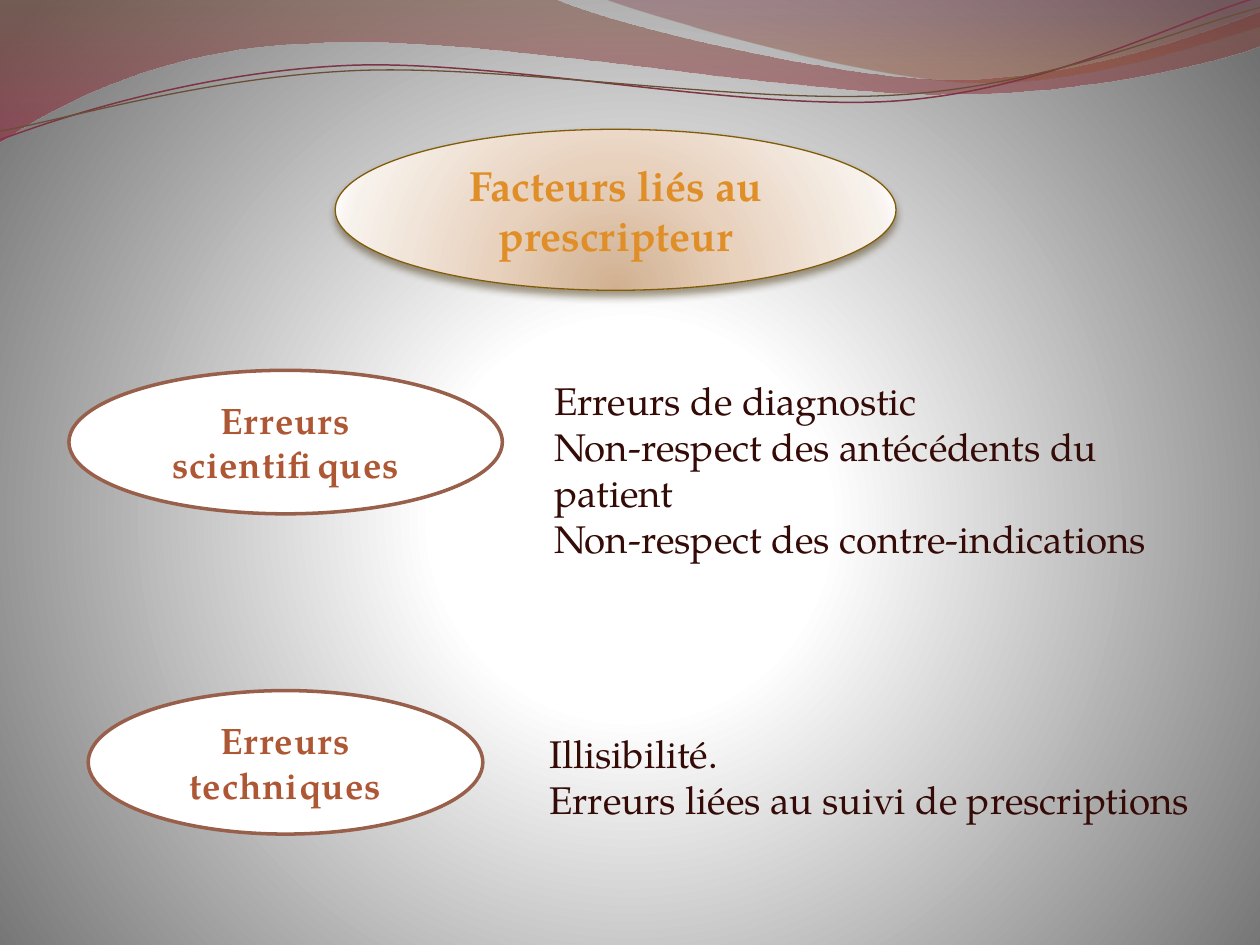
import pptx
import pptx.util
import pptx.dml.color
import pptx.enum.shapes
import pptx.enum.text
import pptx.oxml
import pptx.oxml.ns

Pt = pptx.util.Pt
COLORS = {
    "white": "FFFFFF", "edge_grey": "707070", "title": "E08E27",
    "title_line": "815B07", "title_shadow": "3E2B03",
    "label": "AD5735", "label_line": "98604A", "body": "340B07",
    "brown": "764531", "crimson": "96213A", "plum": "722234",
    "rust": "944F34", "rose_line": "7D3444", "umber_line": "694F36",
    "tan": "D1B090", "sand": "E8D2BE", "cream": "F7F1EB", "ivory": "FDFAF8",
}
FONT = "TeX Gyre Pagella"
LINEAR = '<a:lin ang="5400000" scaled="0"/>'

UPPER_BAND = ((0, 0), [
    (316.8, -0.7), (342.7, 12.2, 478.1, 45.4, 545.8, 45.4),
    (614.2, 45.4, 689.8, 18.7, 720, 6.5), (720.7, 25.9),
    (707.8, 31.7, 626.4, 54.7, 537.1, 54), (447.8, 54, 275, 20.2, 185, 24.5),
    (92.9, 25.9, 33.1, 59.8, -0.7, 81.4)])
RIGHT_BAND = ((344.9, -0.7), [
    (366.5, 7.9, 491, 44.6, 553.7, 46.8),
    (616.3, 49.7, 691.9, 23, 720, 15.1), (720, 0)])
ROSE_WAVE = ((0, 79.9), [
    (34.6, 67, 113.8, 41, 199.4, 37.4), (284.4, 33.8, 427, 64.1, 513.4, 57.6),
    (599.8, 51.1, 675.4, 10.8, 718.6, -1.4)])
UMBER_WAVE = ((0, 74.9), [
    (33.8, 69.1, 118.1, 43.9, 203.8, 40.3), (290.2, 36.7, 429.8, 60.5, 516.2, 54),
    (601.9, 48.2, 677.5, 15.1, 720, 4.3)])


def rgb(name):
    return pptx.dml.color.RGBColor.from_string(COLORS[name])


def drawing_xml(tag, content):
    namespace = pptx.oxml.ns.nsdecls("a")
    return pptx.oxml.parse_xml(f"<a:{tag} {namespace}>{content}</a:{tag}>")


def color_xml(name, alpha=100):
    opacity = f'<a:alpha val="{alpha * 1000}"/>' if alpha < 100 else ""
    return f'<a:srgbClr val="{COLORS[name]}">{opacity}</a:srgbClr>'


def circle(left, top, right, bottom):
    return (f'<a:path path="circle"><a:fillToRect l="{left * 1000}" '
            f't="{top * 1000}" r="{right * 1000}" b="{bottom * 1000}"/></a:path>')


def paint_gradient(owner, fill, stops, direction):
    fill.background()
    empty = next(owner.iter(pptx.oxml.ns.qn("a:noFill")))
    stops_xml = "".join(
        f'<a:gs pos="{position * 1000}">{color_xml(*color)}</a:gs>'
        for position, *color in stops)
    gradient = drawing_xml("gradFill", f"<a:gsLst>{stops_xml}</a:gsLst>{direction}")
    empty.getparent().replace(empty, gradient)


def outline(shape, color, width):
    shape.line.color.rgb = rgb(color)
    shape.line.width = Pt(width)


def add_curve(page, route, close):
    start, segments = route
    builder = page.shapes.build_freeform(*map(Pt, start))
    builder.add_line_segments(
        [tuple(map(Pt, segment[-2:])) for segment in segments], close=close)
    shape = builder.convert_to_shape()
    shape.shadow.inherit = False
    sides = list(shape.element.iter(pptx.oxml.ns.qn("a:lnTo")))
    for side, segment in zip(sides, segments):
        if len(segment) == 6:
            points = "".join(
                f'<a:pt x="{Pt(x) - shape.left}" y="{Pt(y) - shape.top}"/>'
                for x, y in zip(segment[::2], segment[1::2]))
            side.getparent().replace(side, drawing_xml("cubicBezTo", points))
    return shape


def add_band(page, route, stops):
    band = add_curve(page, route, True)
    paint_gradient(band.element, band.fill, stops, LINEAR)
    band.line.fill.background()


def add_wave(page, route, color, width):
    wave = add_curve(page, route, False)
    wave.fill.background()
    outline(wave, color, width)


def write_text(box, lines, color, align, frame_format, font_format):
    frame = box.text_frame
    for name, value in frame_format.items():
        setattr(frame, name, value)
    frame.text = "\n".join(lines)
    for para in frame.paragraphs:
        para.alignment = align
        for span in para.runs:
            for name, value in font_format.items():
                setattr(span.font, name, value)
            span.font.color.rgb = rgb(color)


def add_ellipse(page, place, text, color, size, spacing=0):
    ellipse = page.shapes.add_shape(
        pptx.enum.shapes.MSO_SHAPE.OVAL, *map(Pt, place))
    ellipse.shadow.inherit = False
    write_text(ellipse, [text], color, pptx.enum.text.PP_ALIGN.CENTER,
               {"word_wrap": True,
                "vertical_anchor": pptx.enum.text.MSO_ANCHOR.MIDDLE},
               {"name": FONT, "size": Pt(size), "bold": True})
    if spacing:
        for span in ellipse.text_frame.paragraphs[0].runs:
            span.font._element.set("spc", str(int(spacing * 100)))
    return ellipse


def add_title(page):
    title = add_ellipse(page, (191.5, 73.9, 320.5, 92),
                        "Facteurs liés au prescripteur", "title", 24)
    paint_gradient(title.element, title.fill,
                   [(0, "tan"), (43, "sand"), (93, "cream"), (100, "ivory")],
                   circle(50, 130, 50, -30))
    outline(title, "title_line", 0.75)
    effects = next(title.element.iter(pptx.oxml.ns.qn("a:effectLst")))
    effects.getparent().replace(effects, drawing_xml(
        "effectLst",
        f'<a:outerShdw blurRad="{Pt(4.5)}" dist="{Pt(3)}" dir="5400000" '
        f'rotWithShape="0">{color_xml("title_shadow", 48)}</a:outerShdw>'))


def add_label(page, place, text):
    label = add_ellipse(page, place, text, "label", 21, 0.5)
    label.fill.solid()
    label.fill.fore_color.rgb = rgb("white")
    outline(label, "label_line", 2)


def add_details(page, place, lines):
    box = page.shapes.add_textbox(*map(Pt, place))
    write_text(box, lines, "body", pptx.enum.text.PP_ALIGN.LEFT,
               {"word_wrap": True, "margin_right": Pt(10)},
               {"name": FONT, "size": Pt(22)})


def main():
    deck = pptx.Presentation()
    deck.slide_width, deck.slide_height = Pt(720), Pt(540)
    page = deck.slides.add_slide(deck.slide_layouts[6])
    paint_gradient(page.element, page.background.fill,
                   [(0, "white"), (25, "white"), (100, "edge_grey")],
                   circle(10, 110, 10, 100))

    add_band(page, UPPER_BAND, [(0, "brown", 45), (100, "crimson", 55)])
    add_band(page, RIGHT_BAND, [(0, "plum", 30), (80, "rust", 45)])
    add_wave(page, ROSE_WAVE, "rose_line", 0.85)
    add_wave(page, UMBER_WAVE, "umber_line", 0.75)

    add_title(page)
    add_label(page, (39.4, 211.6, 247.7, 82), "Erreurs scientifiques")
    add_label(page, (50.4, 394.6, 225.5, 82), "Erreurs techniques")
    add_details(page, (309.6, 211.6, 396.7, 116.6), [
        "Erreurs de diagnostic",
        "Non-respect des antécédents du patient",
        "Non-respect des contre-indications"])
    add_details(page, (306.8, 413.4, 399.6, 60.5), [
        "Illisibilité.",
        "Erreurs liées au suivi de prescriptions"])
    deck.save("out.pptx")


if __name__ == "__main__":
    main()
